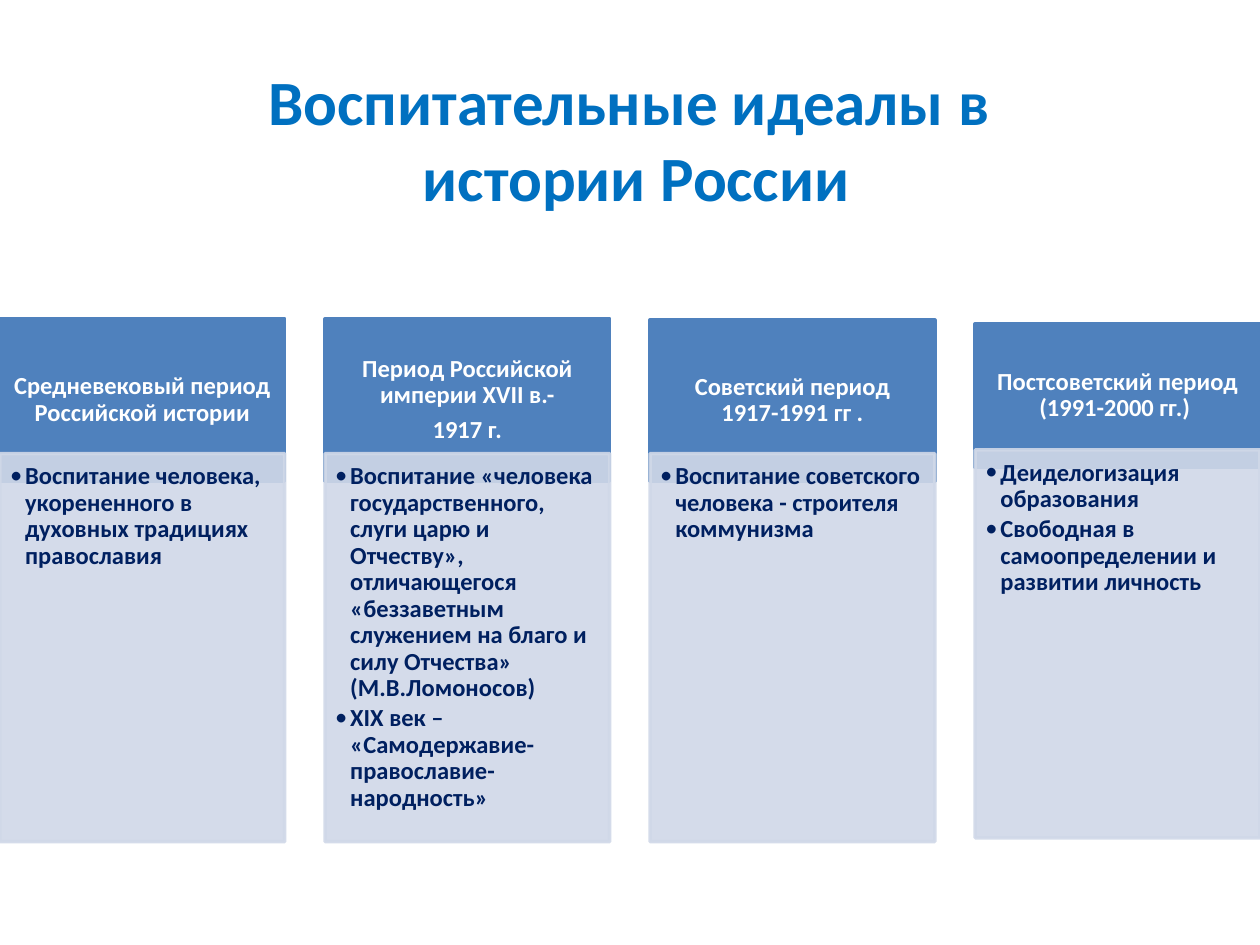
from lxml.etree import SubElement
from pptx import Presentation
from pptx.dml.color import RGBColor
from pptx.enum.shapes import MSO_SHAPE as Shape
from pptx.enum.text import MSO_ANCHOR as Anchor, PP_ALIGN as Align
from pptx.oxml.ns import qn
from pptx.util import Inches, Pt

TITLE = ["Воспитательные идеалы в ", "истории России"]
PERIODS = [
    {
        "header": ["Средневековый период Российской истории"],
        "ideals": ["Воспитание человека, укорененного в духовных традициях православия"],
        "header_top": 2.53, "header_height": 1.29, "body_top": 3.6,
    },
    {
        "header": ["Период Российской империи XVII в.-", "1917 г."],
        "ideals": [
            "Воспитание «человека государственного, слуги царю и Отчеству», "
            "отличающегося «беззаветным служением на благо и силу Отчества» "
            "(М.В.Ломоносов)",
            "XIX век – «Самодержавие-православие-народность»",
        ],
        "header_top": 2.53, "header_height": 1.29, "body_top": 3.6,
    },
    {
        "header": ["Советский период 1917-1991 гг ."],
        "ideals": ["Воспитание советского человека - строителя коммунизма"],
        "header_top": 2.54, "header_height": 1.28, "body_top": 3.6,
    },
    {
        "header": ["Постсоветский период (1991-2000 гг.) "],
        "ideals": [
            "Деиделогизация образования",
            "Свободная в самоопределении и развитии личность",
        ],
        "header_top": 2.57, "header_height": 1.14, "body_top": 3.57,
    },
]

SLIDE_WIDTH, SLIDE_HEIGHT = 10, 7.5
COLUMN_WIDTH, BODY_HEIGHT = 2.26, 3.08
COLUMN_STEP = (SLIDE_WIDTH - COLUMN_WIDTH) / (len(PERIODS) - 1)

THEME = {
    "title": {
        "size": 36, "color": "0070C0", "align": Align.CENTER, "anchor": Anchor.MIDDLE,
        "margins": (0.1, 0.05, 0.1, 0.05), "paragraph": {},
    },
    "header": {
        "size": 14, "color": "FFFFFF", "align": Align.CENTER, "anchor": Anchor.MIDDLE,
        "margins": (0.11, 0.06, 0.11, 0.06), "fill": "4F81BD",
        "paragraph": {"line_spacing": 0.9, "space_after": Pt(4.9)},
    },
    "body": {
        "size": 14, "color": "002060", "align": Align.LEFT, "anchor": Anchor.TOP,
        "margins": (0.08, 0.08, 0.11, 0.12), "fill": "D0D8E8", "opacity": 90,
        "bullet": "•", "indent": 0.12,
        "paragraph": {"line_spacing": 0.9, "space_after": Pt(2.1)},
    },
}


def set_values(target, values):
    for name, value in values.items():
        setattr(target, name, value)


def add_bullet(paragraph, style):
    properties = paragraph._p.get_or_add_pPr()
    properties.set("marL", str(Inches(style["indent"])))
    properties.set("indent", str(-Inches(style["indent"])))
    SubElement(properties, qn("a:buFont"), typeface="Calibri")
    SubElement(properties, qn("a:buChar"), char=style["bullet"])


def write_text(shape, lines, style):
    frame = shape.text_frame
    sides = ("margin_left", "margin_top", "margin_right", "margin_bottom")
    set_values(frame, dict(zip(sides, map(Inches, style["margins"]))))
    set_values(frame, {"word_wrap": True, "vertical_anchor": style["anchor"]})
    for index, line in enumerate(lines):
        paragraph = frame.add_paragraph() if index else frame.paragraphs[0]
        set_values(paragraph, {"alignment": style["align"], **style["paragraph"]})
        if "bullet" in style:
            add_bullet(paragraph, style)
        run = paragraph.add_run()
        run.text = line
        set_values(run.font, {"name": "Calibri", "size": Pt(style["size"]), "bold": True})
        run.font.color.rgb = RGBColor.from_string(style["color"])


def add_panel(slide, place, lines, style):
    shape = slide.shapes.add_shape(Shape.RECTANGLE, *map(Inches, place))
    shape.shadow.inherit = False
    shape.fill.solid()
    shape.line.fill.solid()
    shape.line.width = Pt(2)
    for color in (shape.fill.fore_color, shape.line.color):
        color.rgb = RGBColor.from_string(style["fill"])
    if "opacity" in style:
        for element in list(shape._element.spPr.iter(qn("a:srgbClr"))):
            SubElement(element, qn("a:alpha"), val=str(style["opacity"] * 1000))
    write_text(shape, lines, style)


def main():
    presentation = Presentation()
    presentation.slide_width = Inches(SLIDE_WIDTH)
    presentation.slide_height = Inches(SLIDE_HEIGHT)
    slide = presentation.slides.add_slide(presentation.slide_layouts[6])
    title = slide.shapes.add_textbox(*map(Inches, (0.55, 0.47, 9, 1.25)))
    write_text(title, TITLE, THEME["title"])
    for index, period in enumerate(PERIODS):
        left = index * COLUMN_STEP
        header_place = (left, period["header_top"], COLUMN_WIDTH, period["header_height"])
        body_place = (left, period["body_top"], COLUMN_WIDTH, BODY_HEIGHT)
        add_panel(slide, header_place, period["header"], THEME["header"])
        add_panel(slide, body_place, period["ideals"], THEME["body"])
    presentation.save("out.pptx")


if __name__ == "__main__":
    main()
